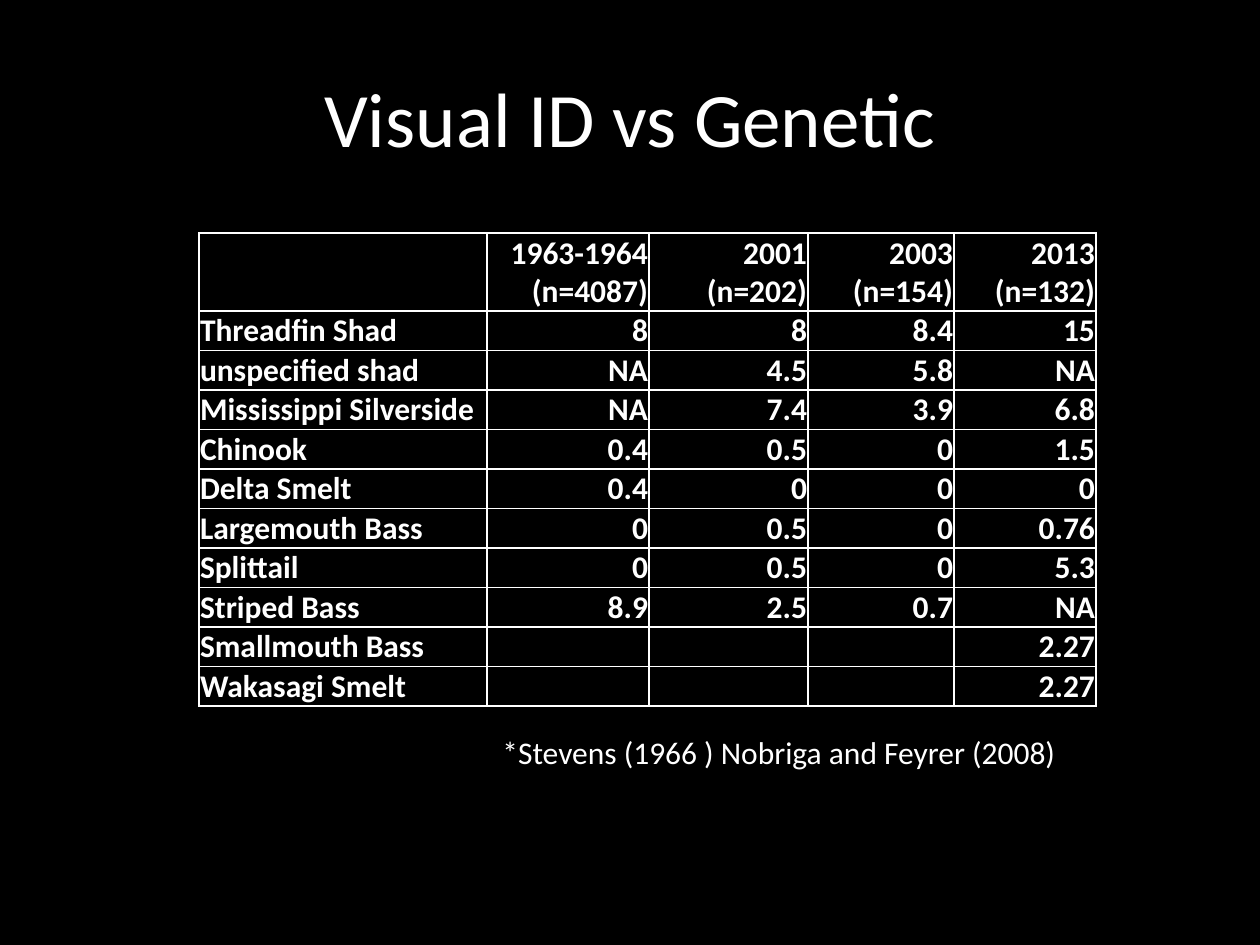
from lxml.etree import SubElement
from pptx import Presentation
from pptx.dml.color import RGBColor
from pptx.enum.text import MSO_ANCHOR as Anchor, MSO_AUTO_SIZE as AutoSize, PP_ALIGN as Align
from pptx.oxml.ns import qn
from pptx.util import Emu, Pt

EMU_PER_PX = 914400 / 126
FONT = "Calibri"
COLORS = {"background": "000000", "text": "FFFFFF", "border": "FFFFFF"}

COLUMN_WIDTHS = [288, 162, 159, 146, 142]
HEADER_HEIGHT, ROW_HEIGHT = 77, 39
DIET_ROWS = [
    ["", "1963-1964 (n=4087)", "2001 (n=202)", "2003 (n=154)", "2013 (n=132)"],
    ["Threadfin Shad", "8", "8", "8.4", "15"],
    ["unspecified shad", "NA", "4.5", "5.8", "NA"],
    ["Mississippi Silverside", "NA", "7.4", "3.9", "6.8"],
    ["Chinook", "0.4", "0.5", "0", "1.5"],
    ["Delta Smelt", "0.4", "0", "0", "0"],
    ["Largemouth Bass", "0", "0.5", "0", "0.76"],
    ["Splittail", "0", "0.5", "0", "5.3"],
    ["Striped Bass", "8.9", "2.5", "0.7", "NA"],
    ["Smallmouth Bass", "", "", "", "2.27"],
    ["Wakasagi Smelt", "", "", "", "2.27"],
]


def px(length):
    return Emu(round(length * EMU_PER_PX))


def color(name):
    return RGBColor.from_string(COLORS[name])


def format_text(text_frame, size, align, bold=False):
    for paragraph in text_frame.paragraphs:
        paragraph.alignment = align
        for run in paragraph.runs:
            run.font.name = FONT
            run.font.size = Pt(size)
            run.font.bold = bold
            run.font.color.rgb = color("text")


def add_text(slide, text, box, size, align, anchor, wrap=True):
    shape = slide.shapes.add_textbox(*map(px, box))
    text_frame = shape.text_frame
    text_frame.text = text
    text_frame.word_wrap = wrap
    text_frame.auto_size = AutoSize.NONE if wrap else AutoSize.SHAPE_TO_FIT_TEXT
    text_frame.vertical_anchor = anchor
    format_text(text_frame, size, align)


def add_borders(cell):
    properties = cell._tc.get_or_add_tcPr()
    for side in ("lnL", "lnR", "lnT", "lnB"):
        line = SubElement(properties, qn(f"a:{side}"), w=str(Pt(1)))
        fill = SubElement(line, qn("a:solidFill"))
        SubElement(fill, qn("a:srgbClr"), val=COLORS["border"])


def fill_cell(cell, text, align):
    cell.margin_left = cell.margin_right = cell.margin_top = px(1)
    cell.margin_bottom = 0
    cell.vertical_anchor = Anchor.BOTTOM
    add_borders(cell)
    cell.fill.solid()
    cell.fill.fore_color.rgb = color("background")
    cell.text_frame.text = text
    format_text(cell.text_frame, 18, align, bold=True)


def add_diet_table(slide, left, top):
    width = sum(COLUMN_WIDTHS)
    height = HEADER_HEIGHT + ROW_HEIGHT * (len(DIET_ROWS) - 1)
    frame = slide.shapes.add_table(
        len(DIET_ROWS), len(COLUMN_WIDTHS), px(left), px(top), px(width), px(height))
    table = frame.table
    table.first_row = table.horz_banding = False
    for column, column_width in zip(table.columns, COLUMN_WIDTHS):
        column.width = px(column_width)
    for row_index, values in enumerate(DIET_ROWS):
        table.rows[row_index].height = px(ROW_HEIGHT if row_index else HEADER_HEIGHT)
        for column_index, value in enumerate(values):
            align = Align.RIGHT if column_index else Align.LEFT
            fill_cell(table.cell(row_index, column_index), value, align)


def main():
    presentation = Presentation()
    presentation.slide_width, presentation.slide_height = px(1260), px(945)
    slide = presentation.slides.add_slide(presentation.slide_layouts[6])
    slide.background.fill.solid()
    slide.background.fill.fore_color.rgb = color("background")

    add_text(slide, "Visual ID vs Genetic", (63, 38, 1134, 157), 44,
             Align.CENTER, Anchor.MIDDLE)
    add_diet_table(slide, 199, 233)
    add_text(slide, "*Stevens (1966 ) Nobriga and Feyrer (2008)", (490, 727, 586, 51), 18,
             Align.LEFT, Anchor.TOP, wrap=False)
    presentation.save("out.pptx")


if __name__ == "__main__":
    main()
